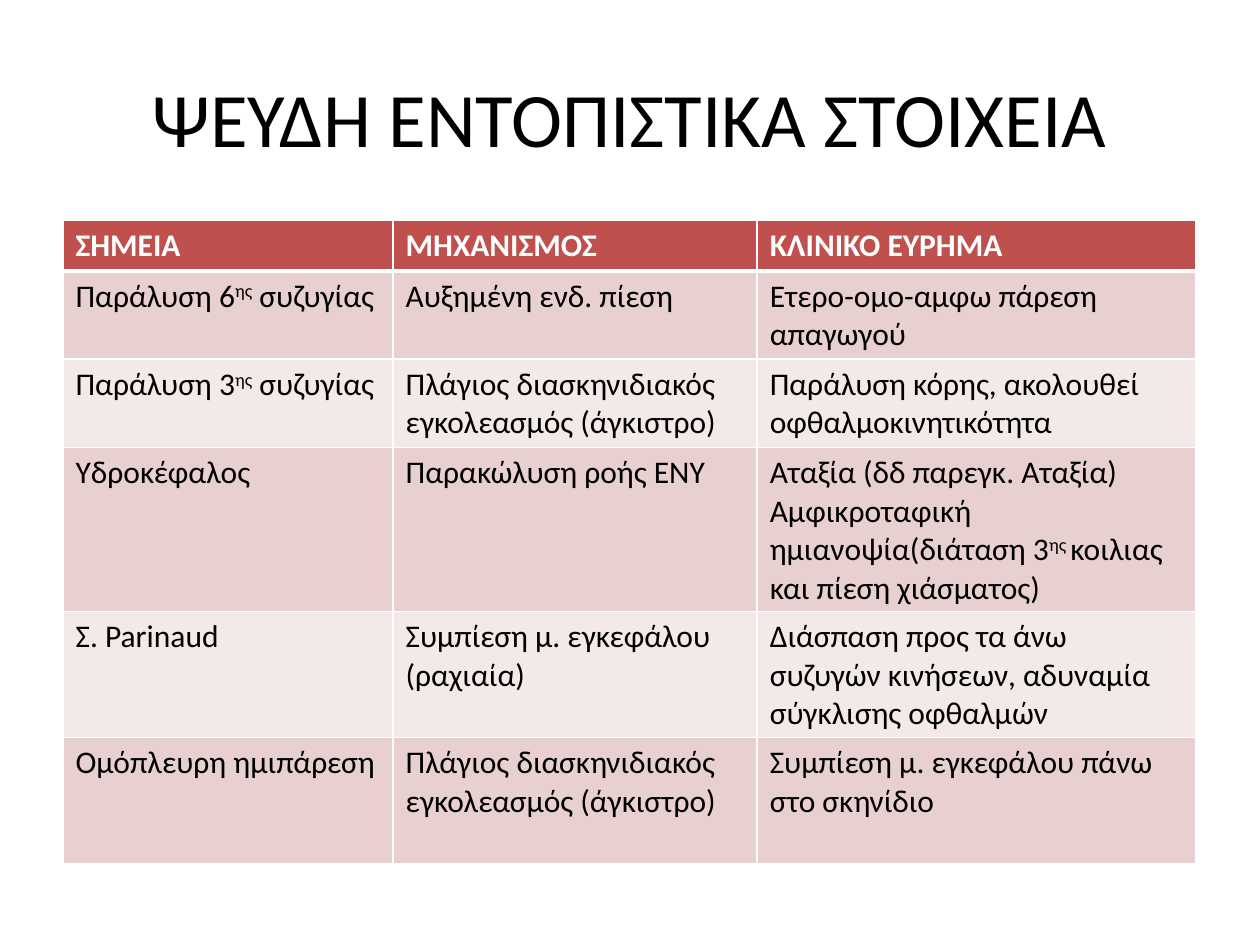
from lxml import etree
from pptx import Presentation
from pptx.dml.color import RGBColor
from pptx.enum.text import MSO_ANCHOR, PP_ALIGN
from pptx.oxml.ns import qn
from pptx.util import Inches, Pt

MIDDLE = MSO_ANCHOR.MIDDLE
CENTER = PP_ALIGN.CENTER
BLACK = RGBColor(0x00, 0x00, 0x00)
WHITE = RGBColor(0xFF, 0xFF, 0xFF)
RED = RGBColor(0xC0, 0x50, 0x4D)
ROSE = RGBColor(0xE8, 0xD0, 0xD0)
PALE = RGBColor(0xF4, 0xE9, 0xE9)

TITLE = "ΨΕΥΔΗ ΕΝΤΟΠΙΣΤΙΚΑ ΣΤΟΙΧΕΙΑ"
HERNIATION = "Πλάγιος διασκηνιδιακός εγκολεασμός (άγκιστρο)"
SIGNS = [
    ("ΣΗΜΕΙΑ", "ΜΗΧΑΝΙΣΜΟΣ", "ΚΛΙΝΙΚΟ ΕΥΡΗΜΑ"),
    ("Παράλυση 6^ης^ συζυγίας", "Αυξημένη ενδ. πίεση",
     "Ετερο-ομο-αμφω πάρεση απαγωγού"),
    ("Παράλυση 3^ης^ συζυγίας", HERNIATION,
     "Παράλυση κόρης, ακολουθεί οφθαλμοκινητικότητα"),
    ("Υδροκέφαλος", "Παρακώλυση ροής ΕΝΥ",
     "Αταξία (δδ παρεγκ. Αταξία)\n"
     "Αμφικροταφική ημιανοψία(διάταση 3^ης ^κοιλιας και πίεση χιάσματος)"),
    ("Σ. Parinaud", "Συμπίεση μ. εγκεφάλου (ραχιαία)",
     "Διάσπαση προς τα άνω συζυγών κινήσεων, αδυναμία σύγκλισης οφθαλμών"),
    ("Ομόπλευρη ημιπάρεση", HERNIATION,
     "Συμπίεση μ. εγκεφάλου πάνω στο σκηνίδιο"),
]
ROW_LINES = [1, 2, 2, 4, 3, 3]
COLUMN_WIDTHS = [2.62, 2.89, 3.48]
LINE_HEIGHT = 0.3
CELL_PADDING = 0.1


class SlideBuilder:
    font_name = "Calibri"

    def __init__(self, prs):
        self.prs = prs
        self.s = prs.slides.add_slide(prs.slide_layouts[6])

    def box(self, x, y, w, h):
        width, height = self.prs.slide_width, self.prs.slide_height
        return int(x * width), int(y * height), int(w * width), int(h * height)

    def set_text(self, tf, text, color, **formats):
        tf.word_wrap = True
        for i, line in enumerate(text.split("\n")):
            p = tf.paragraphs[0] if i == 0 else tf.add_paragraph()
            for j, part in enumerate(line.split("^")):
                r = p.add_run()
                r.text = part
                r.font.color.rgb = color
                for name, value in {"name": self.font_name, **formats}.items():
                    setattr(r.font, name, value)
                if j % 2:
                    r._r.get_or_add_rPr().set("baseline", "30000")

    def title(self, text, *area):
        tf = self.s.shapes.add_textbox(*self.box(*area)).text_frame
        tf.vertical_anchor = MIDDLE
        self.set_text(tf, text, BLACK, size=Pt(44))
        tf.paragraphs[0].alignment = CENTER

    def borders(self, cell, **widths):
        tcPr = cell._tc.get_or_add_tcPr()
        for side in "LRTB":
            ln = etree.SubElement(tcPr, qn(f"a:ln{side}"), w=str(Pt(widths.get(side, 1))))
            fill = etree.SubElement(ln, qn("a:solidFill"))
            etree.SubElement(fill, qn("a:srgbClr"), val=str(WHITE))

    def table(self, rows, widths, heights, *area):
        frame = self.s.shapes.add_table(len(rows), len(widths), *self.box(*area))
        table = frame.table
        for column, width in zip(table.columns, widths):
            column.width = Inches(width)
        for i, (texts, height) in enumerate(zip(rows, heights)):
            table.rows[i].height = Inches(height)
            header = i == 0
            fill = RED if header else (PALE, ROSE)[i % 2]
            edges = {"B": 3} if header else {"T": 3} if i == 1 else {}
            for j, text in enumerate(texts):
                cell = table.cell(i, j)
                self.borders(cell, **edges)
                cell.fill.solid()
                cell.fill.fore_color.rgb = fill
                self.set_text(cell.text_frame, text, WHITE if header else BLACK,
                              size=Pt(18), bold=header)


def main():
    prs = Presentation()
    prs.slide_width, prs.slide_height = Inches(10), Inches(7.5)
    builder = SlideBuilder(prs)
    builder.title(TITLE, 0.05, 0.04, 0.9, 1 / 6)
    heights = [CELL_PADDING + LINE_HEIGHT * lines for lines in ROW_LINES]
    builder.table(SIGNS, COLUMN_WIDTHS, heights, 0.05, 7 / 30, 0.9, 0.68)
    prs.save("out.pptx")


if __name__ == "__main__":
    main()
